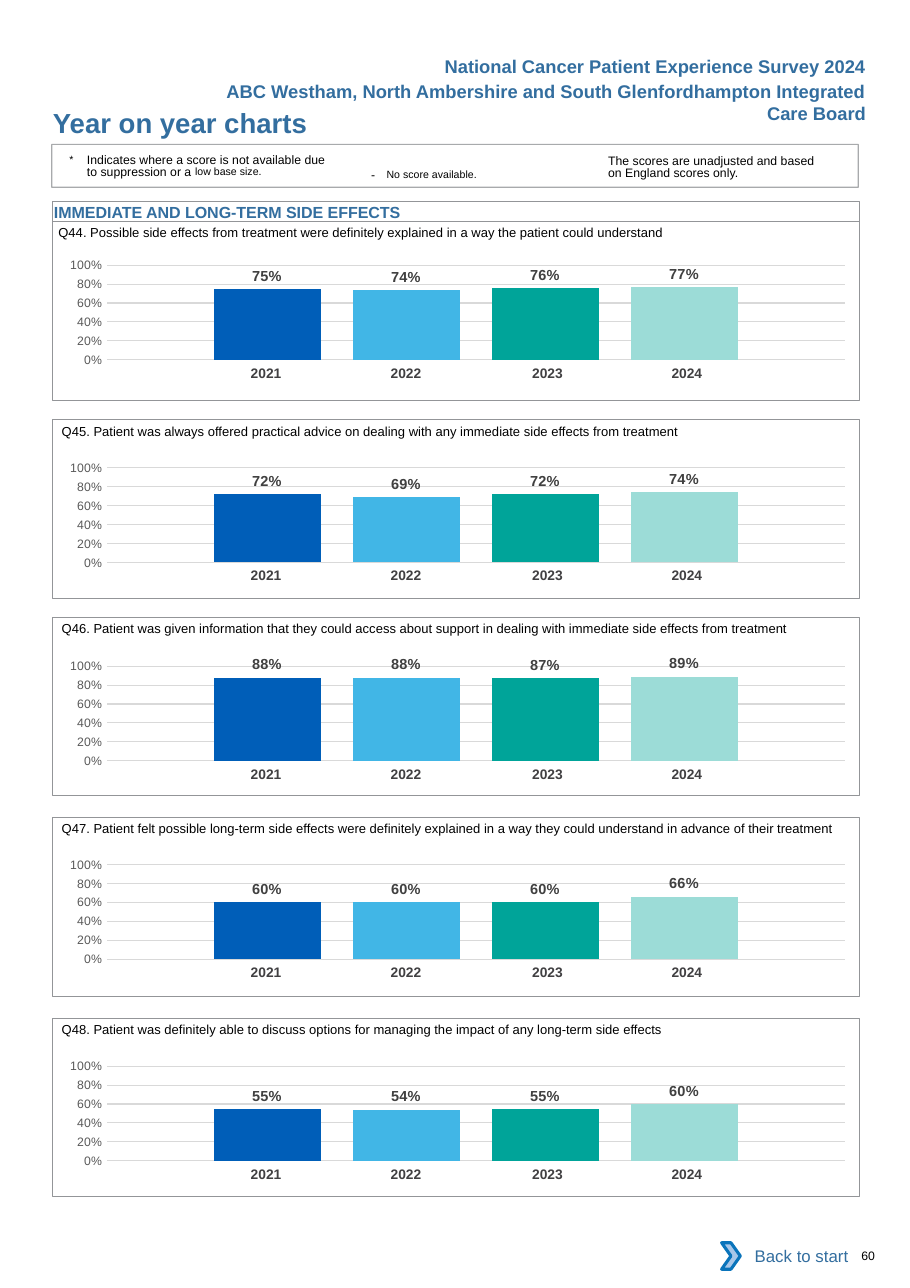
from lxml.etree import SubElement
from pptx import Presentation
from pptx.chart.data import CategoryChartData
from pptx.dml.color import RGBColor
from pptx.enum.chart import XL_CHART_TYPE as ChartType, XL_LABEL_POSITION as LabelSpot
from pptx.enum.chart import XL_TICK_MARK as TickMark
from pptx.enum.shapes import MSO_SHAPE as Preset
from pptx.enum.text import MSO_ANCHOR as Anchor, MSO_AUTO_SIZE as AutoSize, PP_ALIGN as Align
from pptx.oxml import parse_xml
from pptx.oxml.ns import qn
from pptx.util import Inches, Pt

COLOURS = {"heading": "336E9F", "text": "000000", "frame": "939598", "year": "414042",
           "label": "404040", "axis": "595959", "grid": "D9D9D9", "white": "FFFFFF",
           "arrow": "A8C7E9", "arrow line": "0A74BB"}
YEARS = {"2021": "005EB8", "2022": "41B6E6", "2023": "00A499", "2024": "9CDCD7"}
CHART_NS = "http://schemas.openxmlformats.org/drawingml/2006/chart"
DRAWING_NS = "http://schemas.openxmlformats.org/drawingml/2006/main"
NO_STYLE = "{2D5ABB26-0587-4C30-8999-92F81FD0307C}"


def write(frame, spans, size, colour="text", bold=False, align=Align.LEFT, insets=(0, 0, 0, 0)):
    """Fill a text frame; a span is (text, size, baseline) or plain text."""
    frame.word_wrap = True
    frame.auto_size = AutoSize.NONE
    frame.vertical_anchor = Anchor.TOP
    (frame.margin_left, frame.margin_top,
     frame.margin_right, frame.margin_bottom) = [Inches(inset) for inset in insets]
    para = frame.paragraphs[0]
    para.alignment = align
    for item in spans:
        words, points, baseline = (item, size, 0) if isinstance(item, str) else item
        span = para.add_run()
        span.text = words
        span.font.name = "Arial"
        span.font.size = Pt(points)
        span.font.bold = bold
        span.font.color.rgb = RGBColor.from_string(COLOURS[colour])
        if baseline:
            span._r.get_or_add_rPr().set("baseline", str(baseline * 1000))
    return para


def add_box(left, top, width, height, preset=Preset.RECTANGLE, fill=None, line=None, weight=0.5):
    box = page.shapes.add_shape(preset, Inches(left), Inches(top), Inches(width), Inches(height))
    box.shadow.inherit = False
    if fill:
        box.fill.solid()
        box.fill.fore_color.rgb = RGBColor.from_string(COLOURS[fill])
    else:
        box.fill.background()
    if line:
        box.line.color.rgb = RGBColor.from_string(COLOURS[line])
        box.line.width = Pt(weight)
    else:
        box.line.fill.background()
    return box


deck = Presentation()
deck.slide_width, deck.slide_height = Inches(8.26), Inches(11.69)
page = deck.slides.add_slide(deck.slide_layouts[5])

# Page title
title = page.shapes.title
title.left, title.top, title.width, title.height = [Inches(n) for n in (0.47, 0.96, 4.5, 0.3)]
write(title.text_frame, ["Year on year charts"], 18, "heading", True, insets=(0.01, 0, 0, 0))

# Survey name, board name and page number
pad = (0.1, 0.05, 0.1, 0.05)
for left, top, width, height, words, size, colour, bold, align, insets in [
    (3.42, 0.45, 4.54, 0.3, "National Cancer Patient Experience Survey 2024",
     12, "heading", True, Align.RIGHT, pad),
    (1.73, 0.68, 6.23, 0.5,
     "ABC Westham, North Ambershire and South Glenfordhampton Integrated Care Board",
     12, "heading", True, Align.RIGHT, pad),
    (7.72, 11.33, 0.51, 0.13, "60", 8, "text", False, Align.LEFT, (0.1, 0, 0, 0)),
]:
    box = page.shapes.add_textbox(Inches(left), Inches(top), Inches(width), Inches(height))
    write(box.text_frame, [words], size, colour, bold, align, insets)

# Key to the charts
key_frame = add_box(0.47, 1.31, 7.32, 0.39, line="frame", weight=0.75)
for colour in key_frame.line._ln.iter(qn("a:srgbClr")):
    SubElement(colour, qn("a:alpha")).set("val", "80000")
for left, top, width, insets, spacing, hanging, spans in [
    (0.63, 1.38, 2.4, (0, 0.03, 0, 0), 8.1, 0.16,
     [("*\t", 12, 3), "Indicates where a score is not available due to suppression or a ",
      ("low base size.", 12, 7)]),
    (3.27, 1.41, 1.83, pad, None, 0.14, ["-\t", ("No score available.", 12, 3)]),
    (5.52, 1.38, 1.96, (0, 0.03, 0, 0), 8.1, 0,
     ["The scores are unadjusted and based on England scores only."]),
]:
    box = page.shapes.add_textbox(Inches(left), Inches(top), Inches(width), Inches(0.27))
    para = write(box.text_frame, spans, 8, insets=insets)
    if spacing:
        para.line_spacing = Pt(spacing)
    if hanging:
        para._p.get_or_add_pPr().set("marL", str(Inches(hanging)))
        para._p.get_or_add_pPr().set("indent", str(-Inches(hanging)))
    para.space_before = Pt(2.5)

# Section heading
section = add_box(0.48, 1.83, 7.32, 0.18, line="frame")
write(section.text_frame, ["IMMEDIATE AND LONG-TERM SIDE EFFECTS"], 10.5, "heading", True,
      insets=(0.01, 0.01, 0, 0))

# One panel per question: frame top, chart top, text left, question, scores
panels = [
    (2.01, 2.22, 0.53, "Q44. Possible side effects from treatment were definitely explained "
     "in a way the patient could understand", (0.75, 0.74, 0.76, 0.77)),
    (3.81, 4.06, 0.56, "Q45. Patient was always offered practical advice on dealing with any "
     "immediate side effects from treatment", (0.72, 0.69, 0.72, 0.74)),
    (5.6, 5.86, 0.56, "Q46. Patient was given information that they could access about support "
     "in dealing with immediate side effects from treatment", (0.88, 0.88, 0.87, 0.89)),
    (7.42, 7.66, 0.56, "Q47. Patient felt possible long-term side effects were definitely "
     "explained in a way they could understand in advance of their treatment",
     (0.6, 0.6, 0.6, 0.66)),
    (9.24, 9.49, 0.56, "Q48. Patient was definitely able to discuss options for managing the "
     "impact of any long-term side effects", (0.55, 0.54, 0.55, 0.6)),
]
for frame_top, chart_top, text_left, question, scores in panels:
    # Years under the bars
    years = page.shapes.add_table(1, 4, Inches(1.73), Inches(chart_top + 1.05),
                                  Inches(5.15), Inches(0.27)).table
    years.first_row = years.horz_banding = False
    years._tbl.tblPr.find(qn("a:tableStyleId")).text = NO_STYLE
    for column, cell, year, width, right in zip(years.columns, years.rows[0].cells, YEARS,
                                                (1.27, 1.27, 1.34, 1.27), (0, 0, 0.04, 0.12)):
        column.width = Inches(width)
        cell.fill.background()
        write(cell.text_frame, [year], 9, "year", True, Align.CENTER)
        cell.margin_left, cell.margin_right = Inches(0.1), Inches(right)
        cell.margin_top = cell.margin_bottom = Inches(0.05)

    # Bars, one series per year
    data = CategoryChartData(number_format="0%")
    data.categories = ["1"]
    for number, score in enumerate(scores, 1):
        data.add_series(f"Series {number}", [score])
    chart = page.shapes.add_chart(ChartType.COLUMN_CLUSTERED, Inches(0.39), Inches(chart_top),
                                  Inches(7.32), Inches(1.29), data).chart
    chart.has_legend = chart.has_title = False
    chart.font.name, chart.font.size = "Calibri", Pt(10)
    chart.category_axis.visible = False
    axis = chart.value_axis
    axis.minimum_scale, axis.maximum_scale, axis.major_unit = 0, 1, 0.2
    axis.major_tick_mark = axis.minor_tick_mark = TickMark.NONE
    axis.format.line.fill.background()
    axis.major_gridlines.format.line.color.rgb = RGBColor.from_string(COLOURS["grid"])
    axis.major_gridlines.format.line.width = Pt(0.75)
    axis.tick_labels.number_format = "0%"
    axis.tick_labels.number_format_is_linked = False
    font = axis.tick_labels.font
    font.name, font.size = "Arial", Pt(8)
    font.color.rgb = RGBColor.from_string(COLOURS["axis"])
    plot = chart.plots[0]
    plot.vary_by_categories = False
    plot.gap_width, plot.overlap = 200, -30
    for series, fill in zip(plot.series, YEARS.values()):
        series.format.fill.solid()
        series.format.fill.fore_color.rgb = RGBColor.from_string(fill)
        labels = series.data_labels
        labels.show_value = True
        labels.position = LabelSpot.OUTSIDE_END
        labels.number_format, labels.number_format_is_linked = "0%", False
        labels.font.name, labels.font.size, labels.font.bold = "Arial", Pt(9.5), True
        labels.font.color.rgb = RGBColor.from_string(COLOURS["label"])

    # Fixed plot area on a clear background
    body = chart._chartSpace.find(qn("c:chart"))
    body.addnext(parse_xml(f'<c:spPr xmlns:c="{CHART_NS}" xmlns:a="{DRAWING_NS}">'
                           '<a:noFill/><a:ln><a:noFill/></a:ln></c:spPr>'))
    area = body.find(qn("c:plotArea"))
    for layout in area.findall(qn("c:layout")):
        area.remove(layout)
    layout = parse_xml(f'<c:layout xmlns:c="{CHART_NS}"><c:manualLayout/></c:layout>')
    for tag, value in [("layoutTarget", "inner"), ("xMode", "edge"), ("yMode", "edge"),
                       ("x", "0.079"), ("y", "0.145"), ("w", "0.915"), ("h", "0.666")]:
        SubElement(layout[0], qn(f"c:{tag}")).set("val", value)
    area.insert(0, layout)

    # Question and frame
    box = page.shapes.add_textbox(Inches(text_left), Inches(frame_top - 0.06),
                                  Inches(7.25), Inches(0.24))
    write(box.text_frame, [question], 8.5, insets=(0, 0.09, 0, 0))
    add_box(0.48, frame_top, 7.32, 1.62, line="frame")

# Back to start
back = add_box(6.62, 11.19, 1.18, 0.42, fill="white")
write(back.text_frame, ["Back to start"], 11, "heading", align=Align.RIGHT, insets=pad)
back.text_frame.vertical_anchor = Anchor.MIDDLE
add_box(6.55, 11.28, 0.17, 0.24, Preset.CHEVRON, "arrow", "arrow line", 2)

deck.save("out.pptx")
